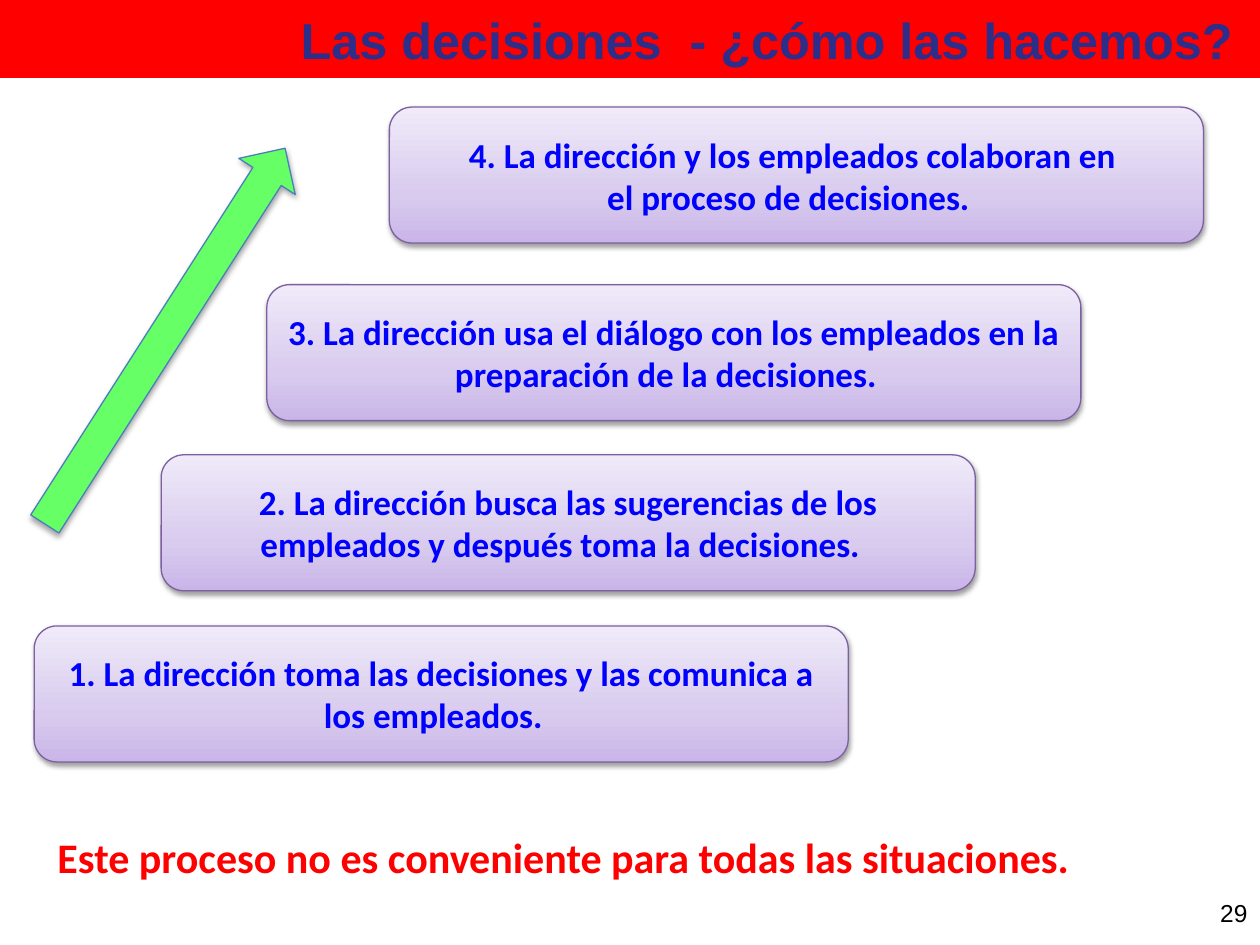
from copy import deepcopy

from lxml.etree import SubElement
from pptx import Presentation
from pptx.dml.color import RGBColor
from pptx.enum.shapes import MSO_SHAPE
from pptx.enum.text import MSO_ANCHOR, MSO_AUTO_SIZE, PP_ALIGN
from pptx.oxml.ns import qn
from pptx.util import Cm, Pt

COLOURS = {
    "banner": "FF0000", "title": "2D2D8A", "step text": "0000FF",
    "step line": "7D60A0", "arrow": "66FF66", "arrow line": "4B7EBC",
    "caption": "FF0000", "black": "000000",
}
STEP_GRADIENT = [(0, "C9B5E8"), (0.35, "D8CBEE"), (1, "F0EAF9")]
STEP_WIDTH, STEP_HEIGHT = 16.41, 2.74
# Left and top in cm, then the wording, from the lowest step to the highest
STEPS = [
    (0.69, 12.62, "1. La dirección toma las decisiones y las comunica a los empleados.  "),
    (3.25, 9.17, "2. La dirección busca las sugerencias de los empleados y después toma la decisiones.  "),
    (5.38, 5.74, "3. La dirección usa el diálogo con los empleados en la preparación de la decisiones.  "),
    (7.85, 2.16, "4. La dirección y los empleados colaboran en \vel proceso de decisiones.  "),
]


def colour(name):
    return RGBColor.from_string(COLOURS[name])


def write(shape, text, size, font, colour_name, bold=True,
          align=PP_ALIGN.LEFT, anchor=MSO_ANCHOR.MIDDLE):
    frame = shape.text_frame
    frame.text = text
    frame.word_wrap = True
    frame.auto_size = MSO_AUTO_SIZE.NONE
    frame.vertical_anchor = anchor
    for para in frame.paragraphs:
        para.alignment = align
        for span in para.runs:
            span.font.size = Pt(size)
            span.font.name = font
            span.font.bold = bold
            span.font.color.rgb = colour(colour_name)


def set_outline(shape, colour_name):
    shape.line.color.rgb = colour(colour_name)
    shape.line.width = Pt(0.75)


def drop_shadow(shape, distance, opacity):
    """Cast a soft shadow straight down; opacity is in percent."""
    shape.shadow.inherit = False
    effects = shape._element.spPr.find(qn("a:effectLst"))
    shadow = SubElement(effects, qn("a:outerShdw"), blurRad=str(Pt(3.1)),
                        dist=str(Pt(distance)), dir="5400000", rotWithShape="0")
    tone = SubElement(shadow, qn("a:srgbClr"), val=COLOURS["black"])
    SubElement(tone, qn("a:alpha"), val=str(opacity * 1000))


def fill_gradient(shape, stops):
    """Fill from bottom to top with three stops."""
    shape.fill.gradient()
    shape.fill.gradient_angle = 90
    stop_list = next(shape._element.spPr.iter(qn("a:gsLst")))
    stop_list.insert(1, deepcopy(stop_list[0]))
    for stop, (position, value) in zip(shape.fill.gradient_stops, stops):
        stop.position = position
        stop.color.rgb = RGBColor.from_string(value)


def add_title(page, text):
    title = page.shapes.title
    title.left, title.top, title.width, title.height = Cm(0), Cm(0), Cm(25.4), Cm(1.57)
    title.fill.solid()
    title.fill.fore_color.rgb = colour("banner")
    write(title, text, 28.8, "Arial", "title", align=PP_ALIGN.RIGHT)


def add_step(page, left, top, text):
    box = page.shapes.add_shape(MSO_SHAPE.ROUNDED_RECTANGLE, Cm(left), Cm(top),
                                Cm(STEP_WIDTH), Cm(STEP_HEIGHT))
    fill_gradient(box, STEP_GRADIENT)
    set_outline(box, "step line")
    drop_shadow(box, 1.6, 38)
    write(box, text, 20, "Calibri", "step text", align=PP_ALIGN.CENTER)


def add_rising_arrow(page):
    arrow = page.shapes.add_shape(MSO_SHAPE.LEFT_ARROW, Cm(-1.17), Cm(6.1), Cm(8.99), Cm(1.35))
    arrow.rotation = 122.6
    arrow.fill.solid()
    arrow.fill.fore_color.rgb = colour("arrow")
    set_outline(arrow, "arrow line")
    drop_shadow(arrow, 1.8, 35)


def main():
    deck = Presentation()
    deck.slide_width, deck.slide_height = Cm(25.4), Cm(19.05)
    page = deck.slides.add_slide(deck.slide_layouts[5])

    add_title(page, "Las decisiones  - ¿cómo las hacemos? ")
    number = page.shapes.add_textbox(Cm(19.48), Cm(17.73), Cm(5.92), Cm(1.32))
    write(number, "29", 14, "Arial", "black", bold=False, align=PP_ALIGN.RIGHT)
    for left, top, text in STEPS:
        add_step(page, left, top, text)
    add_rising_arrow(page)
    caption = page.shapes.add_textbox(Cm(0.91), Cm(16.64), Cm(24.74), Cm(1.27))
    write(caption, "Este proceso no es conveniente para todas las situaciones.",
          24, "Calibri", "caption", anchor=MSO_ANCHOR.TOP)

    deck.save("out.pptx")


if __name__ == "__main__":
    main()
